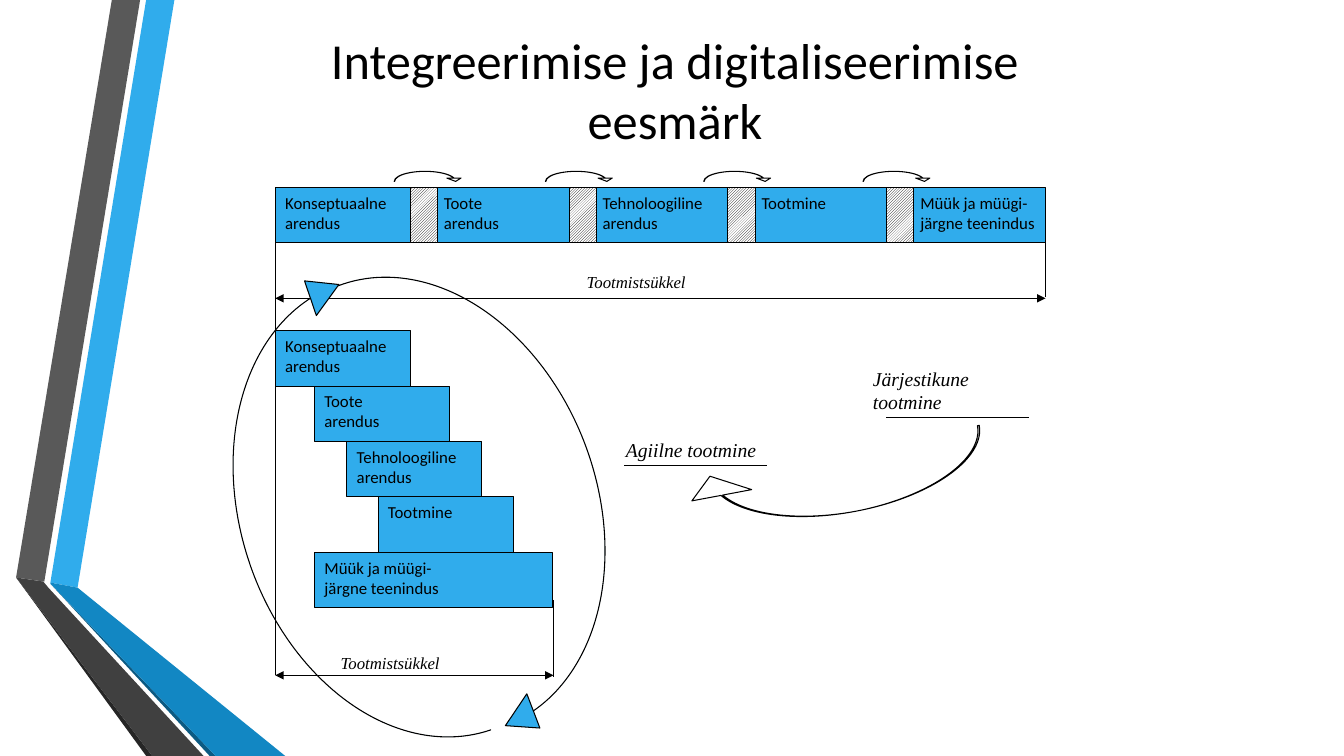
from dataclasses import dataclass

from lxml.etree import SubElement
from pptx import Presentation
from pptx.dml.color import RGBColor
from pptx.enum.dml import MSO_PATTERN
from pptx.enum.shapes import MSO_CONNECTOR, MSO_SHAPE
from pptx.enum.text import MSO_ANCHOR, MSO_AUTO_SIZE, PP_ALIGN
from pptx.oxml.ns import qn
from pptx.util import Inches, Pt


@dataclass(frozen=True)
class Theme:
    black: str = "000000"
    white: str = "FFFFFF"
    blue: str = "30ACEC"
    blue_dark: str = "1287C3"
    blue_edge: str = "0C5A82"
    gray: str = "595959"
    gray_dark: str = "404040"
    gray_edge: str = "262626"
    body_font: str = "Calibri"
    note_font: str = "Times New Roman"
    title_size: int = 36
    label_size: int = 14
    body_size: int = 12
    line_width: float = 0.75


class SlideBuilder:
    def __init__(self, slide, theme):
        self.shapes = slide.shapes
        self.theme = theme

    def add_text(self, shape, lines, font_format, alignment=PP_ALIGN.LEFT, **frame_format):
        frame = shape.text_frame
        for name, value in frame_format.items():
            setattr(frame, name, value)
        for index, line in enumerate(lines):
            paragraph = frame.paragraphs[0] if index == 0 else frame.add_paragraph()
            paragraph.alignment = alignment
            run = paragraph.add_run()
            run.text = line
            for name, value in font_format.items():
                setattr(run.font, name, value)
            run.font.color.rgb = RGBColor.from_string(self.theme.black)

    def ribbon(self, points, color):
        corners = [(Inches(x), Inches(y)) for x, y in points]
        builder = self.shapes.build_freeform(*corners[0], scale=1.0)
        builder.add_line_segments(corners[1:], close=True)
        shape = builder.convert_to_shape()
        shape.shadow.inherit = False
        shape.fill.solid()
        shape.fill.fore_color.rgb = RGBColor.from_string(color)
        shape.line.fill.background()

    def outlined(self, kind, box, color, adjustments=(), rotation=0):
        shape = self.shapes.add_shape(kind, *map(Inches, box))
        shape.shadow.inherit = False
        shape.fill.solid()
        shape.fill.fore_color.rgb = RGBColor.from_string(color)
        shape.line.color.rgb = RGBColor.from_string(self.theme.black)
        shape.line.width = Pt(self.theme.line_width)
        for index, value in enumerate(adjustments):
            shape.adjustments[index] = value
        shape.rotation = rotation
        return shape

    def stage(self, box, lines):
        shape = self.outlined(MSO_SHAPE.RECTANGLE, box, self.theme.blue)
        font_format = {"name": self.theme.body_font, "size": Pt(self.theme.body_size)}
        self.add_text(shape, lines, font_format,
                      vertical_anchor=MSO_ANCHOR.TOP, word_wrap=False)

    def hatched(self, box):
        fill = self.outlined(MSO_SHAPE.RECTANGLE, box, self.theme.white).fill
        fill.patterned()
        fill.pattern = MSO_PATTERN.LIGHT_UPWARD_DIAGONAL
        fill.fore_color.rgb = RGBColor.from_string(self.theme.black)
        fill.back_color.rgb = RGBColor.from_string(self.theme.white)

    def title(self, box, text):
        shape = self.shapes.add_textbox(*map(Inches, box))
        font_format = {"name": self.theme.body_font, "size": Pt(self.theme.title_size)}
        self.add_text(shape, [text], font_format, PP_ALIGN.CENTER,
                      word_wrap=True, vertical_anchor=MSO_ANCHOR.MIDDLE)

    def note(self, box, text, size):
        shape = self.shapes.add_textbox(*map(Inches, box))
        font_format = {"name": self.theme.note_font, "size": Pt(size), "italic": True}
        self.add_text(shape, [text], font_format, word_wrap=True,
                      auto_size=MSO_AUTO_SIZE.SHAPE_TO_FIT_TEXT)

    def line(self, start, end, arrows=False):
        connector = self.shapes.add_connector(
            MSO_CONNECTOR.STRAIGHT, *map(Inches, start + end))
        connector.line.color.rgb = RGBColor.from_string(self.theme.black)
        connector.line.width = Pt(self.theme.line_width)
        properties = connector.element.spPr
        if arrows:
            outline = properties.find(qn("a:ln"))
            for tag in ("a:headEnd", "a:tailEnd"):
                SubElement(outline, qn(tag), type="triangle")
        SubElement(properties, qn("a:effectLst"))


STAGES = [
    ["Konseptuaalne", "arendus"],
    ["Toote", "arendus"],
    ["Tehnoloogiline", "arendus"],
    ["Tootmine"],
    ["Müük ja müügi-", "järgne teenindus"],
]
LEFT, RIGHT, AGILE_RIGHT = 2.73, 10.37, 5.49
ROW_TOP, STAIR_TOP = 1.86, 3.28
STAGE_WIDTH, STAGE_HEIGHT = 1.34, 0.55
STAGE_STEP = (RIGHT - LEFT - STAGE_WIDTH) / (len(STAGES) - 1)
HATCH_WIDTH = 0.27


def main():
    presentation = Presentation()
    presentation.slide_width = Inches(13.33)
    presentation.slide_height = Inches(7.5)
    theme = Theme()
    builder = SlideBuilder(
        presentation.slides.add_slide(presentation.slide_layouts[6]), theme)

    # Folded ribbons on the left edge
    for color, points in [
        (theme.blue, [(0.5, 5.78), (0.77, 5.83), (1.73, 0), (1.45, 0)]),
        (theme.gray, [(1.39, 0), (1.11, 0), (0.16, 5.73), (0.44, 5.77)]),
        (theme.gray_edge, [(0.16, 5.73), (1.45, 7.5), (1.51, 7.5)]),
        (theme.blue_edge, [(0.5, 5.79), (2.08, 7.5), (2.14, 7.5)]),
        (theme.blue_dark, [(0.5, 5.79), (2.14, 7.5), (2.83, 7.5),
                           (0.77, 5.83), (0.5, 5.78)]),
        (theme.gray_dark, [(2.02, 7.5), (0.48, 5.83), (0.43, 5.77),
                           (0.16, 5.73), (1.51, 7.5)]),
    ]:
        builder.ribbon(points, color)

    builder.title((2.57, 0.31, 8.25, 1.15), "Integreerimise ja digitaliseerimise eesmärk")

    # Sequential production: stages in a row, gaps and hand-over arrows
    for index, lines in enumerate(STAGES):
        builder.stage((LEFT + index * STAGE_STEP, ROW_TOP, STAGE_WIDTH, STAGE_HEIGHT), lines)
    for index in range(len(STAGES) - 1):
        hatch_left = LEFT + STAGE_WIDTH + index * STAGE_STEP
        builder.hatched((hatch_left, ROW_TOP, HATCH_WIDTH, STAGE_HEIGHT))
    for arrow_left in (3.91, 5.41, 6.98, 8.56):
        builder.outlined(MSO_SHAPE.CURVED_DOWN_ARROW, (arrow_left, 1.7, 0.68, 0.1),
                         theme.white, (0.04, 1.41, 0.33))

    # Production cycle dimensions
    builder.line((LEFT, 2.25), (LEFT, 6.7))
    builder.line((RIGHT, 2.18), (RIGHT, 2.95))
    builder.line((LEFT, 2.96), (RIGHT, 2.96), arrows=True)
    builder.line((AGILE_RIGHT, 5.95), (AGILE_RIGHT, 6.72))
    builder.line((LEFT, 6.7), (AGILE_RIGHT, 6.7), arrows=True)
    for left, top in ((5.72, 2.65), (3.28, 6.43)):
        builder.note((left, top, 1.57, 0.3), "Tootmistsükkel", theme.body_size)

    # Agile production: overlapping stages as a staircase
    stair_places = [(LEFT, STAGE_WIDTH), (3.12, STAGE_WIDTH), (3.44, STAGE_WIDTH),
                    (3.75, STAGE_WIDTH), (3.12, 2.36)]
    for index, (lines, (left, width)) in enumerate(zip(STAGES, stair_places)):
        builder.stage((left, STAIR_TOP + index * STAGE_HEIGHT, width, STAGE_HEIGHT), lines)

    # Underlined names of the two approaches
    builder.note((6.11, 4.3, 1.58, 0.34), "Agiilne tootmine", theme.label_size)
    builder.note((8.56, 3.59, 1.81, 0.57), "Järjestikune tootmine", theme.label_size)
    for left, top in ((6.19, 4.62), (8.79, 4.14)):
        builder.line((left, top), (left + 1.42, top))

    # Transition arrow and the two arrows of the agile loop
    for box, color, adjustments, rotation in [
        ((7.98, 3.29, 0.61, 3.02), theme.white, (0.03, 0.99, 0.34), 79.3),
        ((4.16, 2.37, 1.73, 4.85), theme.blue, (0, 0.21, 0.18), 339.2),
        ((2.4, 2.8, 1.73, 4.85), theme.blue, (0, 0.21, 0.18), 161.2),
    ]:
        builder.outlined(MSO_SHAPE.CURVED_LEFT_ARROW, box, color, adjustments, rotation)

    presentation.save("out.pptx")


if __name__ == "__main__":
    main()
